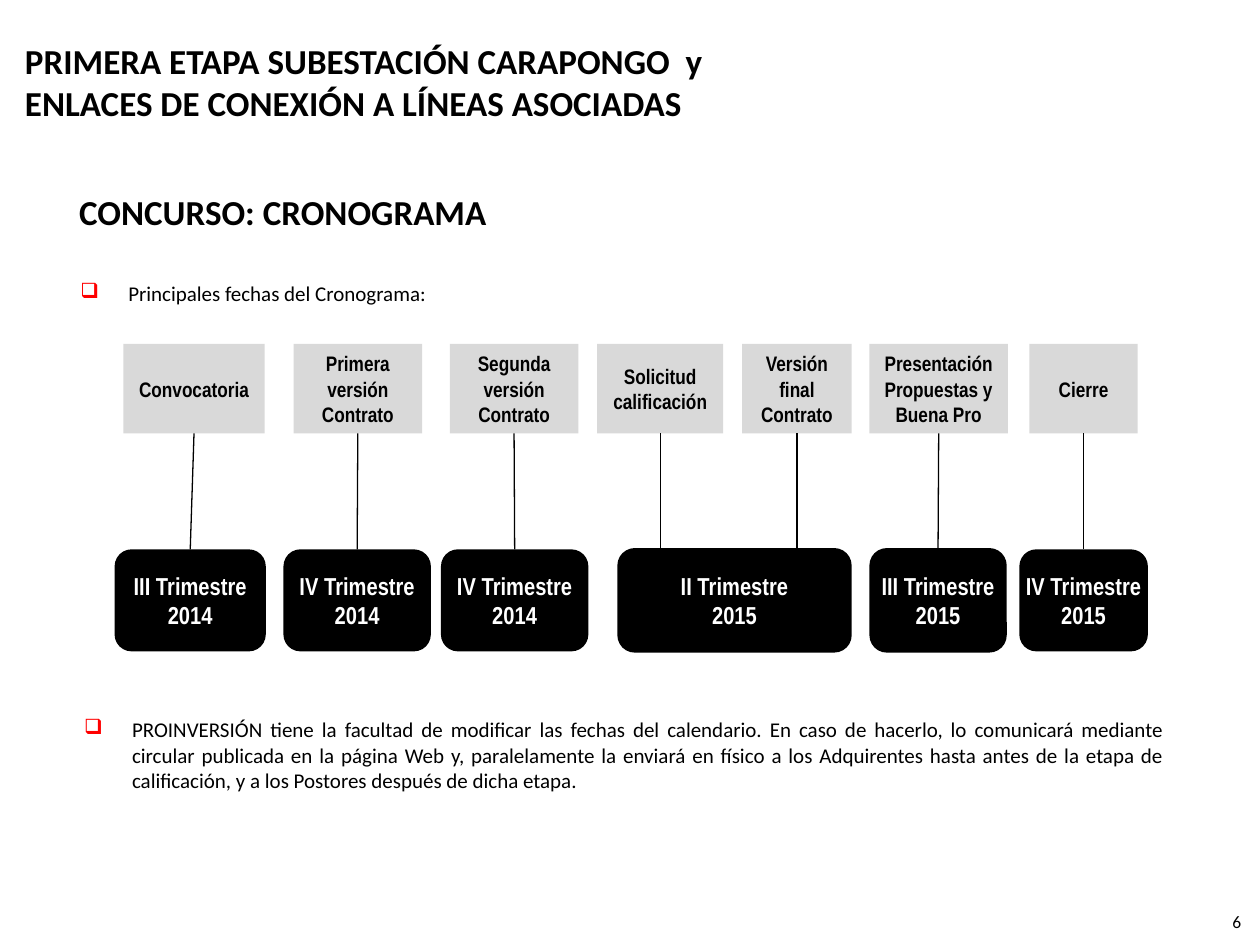
from lxml import etree
from pptx import Presentation
from pptx.dml.color import RGBColor
from pptx.enum.shapes import MSO_CONNECTOR, MSO_SHAPE
from pptx.enum.text import MSO_ANCHOR, PP_ALIGN
from pptx.oxml.ns import qn
from pptx.util import Inches, Pt

BLACK, WHITE, GREY, RED = "000000", "FFFFFF", "D9D9D9", "FF0000"
STAGE_TOP, STAGE_HEIGHT = 2.73, 0.71

# Quarter: lines, left, top, width, height; then its stages: label, left, width
SCHEDULE = [
    (["III Trimestre", "2014"], (0.91, 4.36, 1.2, 0.81),
     [("Convocatoria", 0.98, 1.12)]),
    (["IV Trimestre", "2014"], (2.25, 4.36, 1.17, 0.81),
     [("Primera versión Contrato", 2.33, 1.02)]),
    (["IV Trimestre", "2014"], (3.5, 4.36, 1.17, 0.81),
     [("Segunda versión Contrato", 3.57, 1.02)]),
    (["II Trimestre", "2015"], (4.9, 4.35, 1.86, 0.83),
     [("Solicitud calificación", 4.74, 1), ("Versión final Contrato", 5.89, 0.87)]),
    (["III Trimestre", "2015"], (6.9, 4.35, 1.09, 0.83),
     [("Presentación Propuestas y Buena Pro", 6.9, 1.1)]),
    (["IV Trimestre", "2015"], (8.09, 4.36, 1.02, 0.81),
     [("Cierre", 8.17, 0.86)]),
]


def rgb(color):
    return RGBColor.from_string(color)


def write(frame, lines, size, font="Calibri", color=BLACK, bold=False,
          align=PP_ALIGN.LEFT, anchor=MSO_ANCHOR.TOP, wrap=True):
    frame.word_wrap = wrap
    frame.vertical_anchor = anchor
    for index, line in enumerate(lines):
        paragraph = frame.add_paragraph() if index else frame.paragraphs[0]
        paragraph.text = line
        paragraph.alignment = align
        paragraph.font.size = Pt(size)
        paragraph.font.name = font
        paragraph.font.bold = bold
        paragraph.font.color.rgb = rgb(color)


def add_text(slide, box, lines, size, **style):
    frame = slide.shapes.add_textbox(*map(Inches, box)).text_frame
    write(frame, lines, size, **style)
    return frame


def add_bullet_item(slide, box, text):
    paragraph = add_text(slide, box, [text], 12, align=PP_ALIGN.JUSTIFY).paragraphs[0]
    properties = paragraph._p.get_or_add_pPr()
    properties.set("marL", str(Inches(0.38)))
    properties.set("indent", str(-Inches(0.38)))
    bullet_color = etree.Element(qn("a:buClr"))
    etree.SubElement(bullet_color, qn("a:srgbClr"), val=RED)
    bullet = etree.Element(qn("a:buChar"), char="❑")
    properties.insert(0, bullet_color)
    properties.insert(1, bullet)


def add_block(slide, kind, box, lines, fill, size, color, wrap):
    block = slide.shapes.add_shape(kind, *map(Inches, box))
    block.shadow.inherit = False
    block.fill.solid()
    block.fill.fore_color.rgb = rgb(fill)
    block.line.fill.background()
    write(block.text_frame, lines, size, "Arial Narrow", color, True,
          PP_ALIGN.CENTER, MSO_ANCHOR.MIDDLE, wrap)
    return block


def add_link(slide, stage, quarter, only_stage):
    """Drop a line from a stage; centre it on the quarter if it has one stage."""
    x = stage.left + stage.width // 2
    link = slide.shapes.add_connector(
        MSO_CONNECTOR.STRAIGHT, x, stage.top + stage.height, x, quarter.top)
    link.begin_connect(stage, 2)
    if only_stage:
        link.end_connect(quarter, 0)
    link.line.color.rgb = rgb(BLACK)
    link.line.width = Pt(0.75)
    etree.SubElement(link._element.spPr, qn("a:effectLst"))


def add_timeline(slide):
    for quarter_lines, quarter_box, stages in SCHEDULE:
        quarter = add_block(slide, MSO_SHAPE.ROUNDED_RECTANGLE, quarter_box,
                            quarter_lines, BLACK, 14, WHITE, False)
        for label, left, width in stages:
            stage = add_block(slide, MSO_SHAPE.RECTANGLE,
                              (left, STAGE_TOP, width, STAGE_HEIGHT),
                              [label], GREY, 12, BLACK, True)
            add_link(slide, stage, quarter, len(stages) == 1)


def add_headings(slide):
    heading = dict(bold=True, anchor=MSO_ANCHOR.MIDDLE)
    add_text(slide, (0.1, 0.21, 5.74, 0.87),
             ["PRIMERA ETAPA SUBESTACIÓN CARAPONGO  y",
              "ENLACES DE CONEXIÓN A LÍNEAS ASOCIADAS"], 20, **heading)
    add_text(slide, (0.53, 1.39, 3.65, 0.58), ["CONCURSO: CRONOGRAMA"], 20, **heading)


def main():
    deck = Presentation()
    deck.slide_width, deck.slide_height = Inches(10), Inches(7.5)
    slide = deck.slides.add_slide(deck.slide_layouts[6])
    add_headings(slide)
    add_bullet_item(slide, (0.54, 2.18, 3.03, 0.31), "Principales fechas del Cronograma:")
    add_timeline(slide)
    add_bullet_item(
        slide, (0.57, 5.64, 8.77, 0.71),
        "PROINVERSIÓN tiene la facultad de modificar las fechas del calendario. "
        "En caso de hacerlo, lo comunicará mediante circular publicada en la página "
        "Web y, paralelamente la enviará en físico a los Adquirentes hasta antes de "
        "la etapa de calificación, y a los Postores después de dicha etapa.")
    add_text(slide, (9.45, 7.18, 0.5, 0.32), ["6"], 10, align=PP_ALIGN.RIGHT)
    deck.save("out.pptx")


if __name__ == "__main__":
    main()
